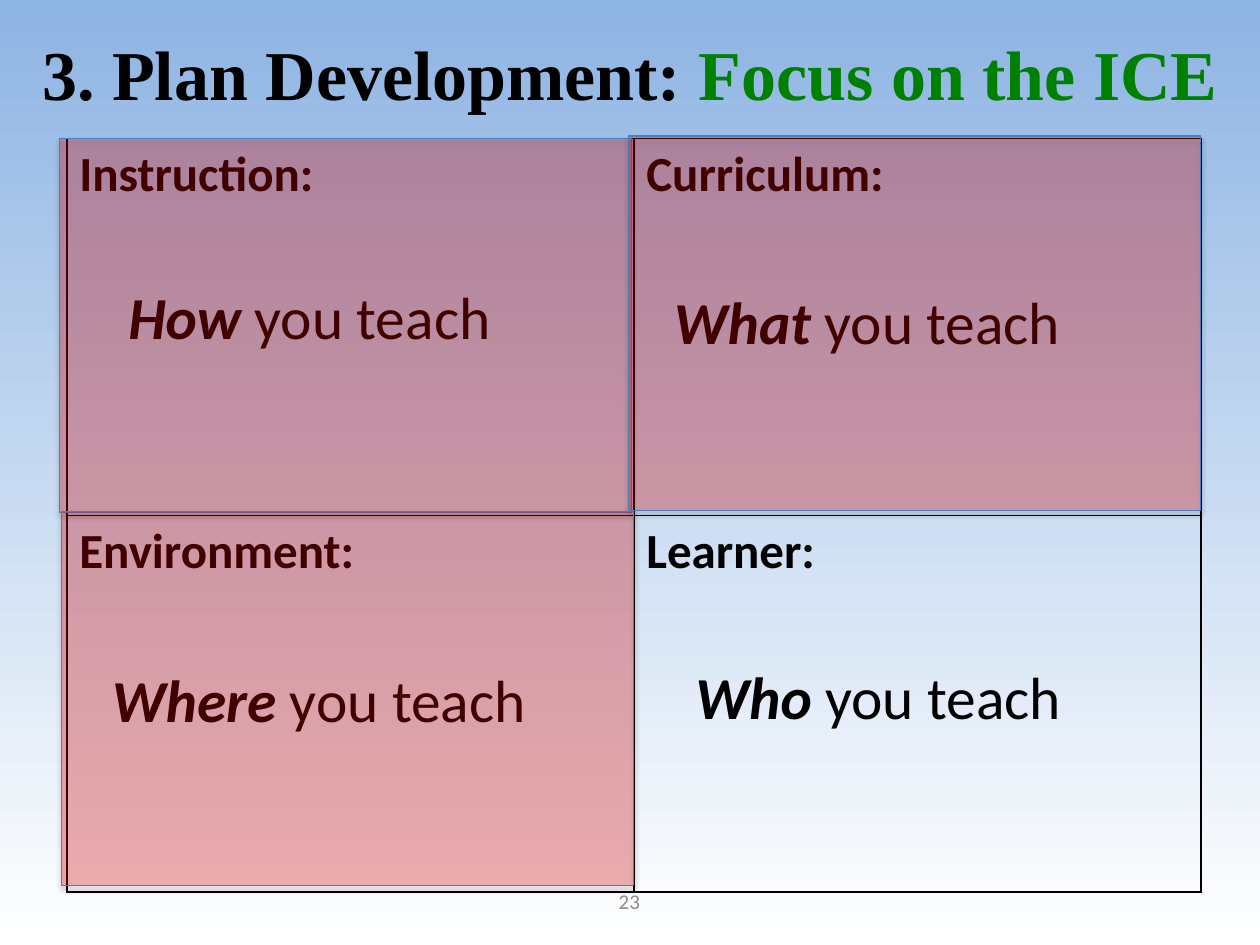
import pptx
import pptx.dml.color
import pptx.enum.text
import pptx.oxml
import pptx.util
from pptx.util import Inches

RGBColor = pptx.dml.color.RGBColor
ALIGN = pptx.enum.text.PP_ALIGN
ANCHOR = pptx.enum.text.MSO_ANCHOR

BLACK = RGBColor(0x00, 0x00, 0x00)
WHITE = RGBColor(0xFF, 0xFF, 0xFF)
SKY = RGBColor(0x8E, 0xB4, 0xE3)
GREEN = RGBColor(0x00, 0x80, 0x00)
GRAY = RGBColor(0x8C, 0x8C, 0x8C)
RED = RGBColor(0xFF, 0x00, 0x00)
BLUE = RGBColor(0x4B, 0x7E, 0xBC)

TITLE = {"name": "Times New Roman", "size": 40, "bold": True, "color": BLACK}
HEADING = {"name": "Calibri", "size": 28, "bold": True, "color": BLACK}
BODY = {"name": "Calibri", "size": 34, "bold": False, "color": BLACK}
NUMBER = {"name": "Calibri", "size": 12, "color": GRAY}

HEADINGS = [["Instruction:", "Curriculum:"], ["Environment:", "Learner:"]]
PHRASES = [
    ("How ", (0.92, 2.17, 3.75, 0.67)),
    ("What ", (5.25, 2.21, 4, 0.67)),
    ("Where ", (0.79, 5.21, 4.17, 0.67)),
    ("Who ", (5.42, 5.19, 3.75, 0.67)),
]
VEILS = [(0.47, 1.1, 4.54, 2.97), (4.99, 1.08, 4.54, 2.97), (0.49, 4.06, 4.54, 2.97)]

DRAWING = 'xmlns:a="http://schemas.openxmlformats.org/drawingml/2006/main"'
BORDER = (
    f'<a:{{side}} {DRAWING} w="12700"><a:solidFill><a:srgbClr val="{BLACK}"/>'
    "</a:solidFill></a:{side}>"
)
ALPHA = f'<a:alpha {DRAWING} val="25000"/>'
SHADOW = (
    f'<a:effectLst {DRAWING}><a:outerShdw blurRad="39370" dist="22860" dir="5400000" '
    f'rotWithShape="0"><a:srgbClr val="{BLACK}"><a:alpha val="35000"/></a:srgbClr>'
    "</a:outerShdw></a:effectLst>"
)


def to_inches(box):
    """Turn a box of plain numbers into lengths."""
    return [Inches(value) for value in box]


def add_span(para, text, style):
    """Add a run of text in the given style."""
    span = para.add_run()
    span.text = text
    for key, value in style.items():
        if key == "color":
            span.font.color.rgb = value
        else:
            setattr(span.font, key, pptx.util.Pt(value) if key == "size" else value)


def add_text(page, box, spans, align=ALIGN.LEFT, anchor=ANCHOR.TOP):
    """Place one line of styled text in the box."""
    frame = page.shapes.add_textbox(*to_inches(box)).text_frame
    frame.word_wrap = True
    frame.vertical_anchor = anchor
    para = frame.paragraphs[0]
    para.alignment = align
    for text, style in spans:
        add_span(para, text, style)


def paint_background(page):
    """Fill the page with a gradient from white at the bottom to sky blue."""
    fill = page.background.fill
    fill.gradient()
    fill.gradient_angle = 90
    for stop, color in zip(fill.gradient_stops, (WHITE, SKY)):
        stop.color.rgb = color


def add_title(page, box):
    """Place the two-colour title."""
    spans = [
        ("3. Plan Development: ", TITLE),
        ("Focus on the ICE", {**TITLE, "color": GREEN}),
    ]
    add_text(page, box, spans, ALIGN.CENTER, ANCHOR.MIDDLE)


def add_grid(page, box):
    """Place the bordered table of four headings."""
    table = page.shapes.add_table(len(HEADINGS), len(HEADINGS[0]), *to_inches(box)).table
    table.first_row = table.horz_banding = False
    for row, headings in enumerate(HEADINGS):
        for column, heading in enumerate(headings):
            cell = table.cell(row, column)
            add_span(cell.text_frame.paragraphs[0], heading, HEADING)
            properties = cell._tc.get_or_add_tcPr()
            for side in ("lnL", "lnR", "lnT", "lnB"):
                properties.append(pptx.oxml.parse_xml(BORDER.format(side=side)))
            cell.fill.background()


def add_phrase(page, box, word):
    """Place a phrase that opens with an emphasised word."""
    strong = {**BODY, "bold": True, "italic": True}
    add_text(page, box, [(word, strong), ("you teach", BODY)])


def add_veil(page, box):
    """Place a translucent red rectangle with a soft shadow."""
    shape = page.shapes.add_shape(
        pptx.enum.shapes.MSO_SHAPE.RECTANGLE, *to_inches(box)
    )
    shape.fill.solid()
    shape.fill.fore_color.rgb = RED
    shape.line.color.rgb = BLUE
    shape.line.width = pptx.util.Pt(0.75)
    properties = shape._element.spPr
    properties.find(".//{*}srgbClr").append(pptx.oxml.parse_xml(ALPHA))
    properties.append(pptx.oxml.parse_xml(SHADOW))


def main():
    """Build and save the deck."""
    deck = pptx.Presentation()
    deck.slide_width, deck.slide_height = Inches(10), Inches(7.5)
    page = deck.slides.add_slide(deck.slide_layouts[6])
    paint_background(page)
    number_box = (3.83, 6.95, 2.33, 0.4)
    add_text(page, number_box, [("23", NUMBER)], ALIGN.CENTER, ANCHOR.MIDDLE)
    add_title(page, (0, 0.06, 10, 1.03))
    add_grid(page, (0.53, 1.1, 9, 5.98))
    for word, box in PHRASES:
        add_phrase(page, box, word)
    for box in VEILS:
        add_veil(page, box)
    deck.save("out.pptx")


if __name__ == "__main__":
    main()
